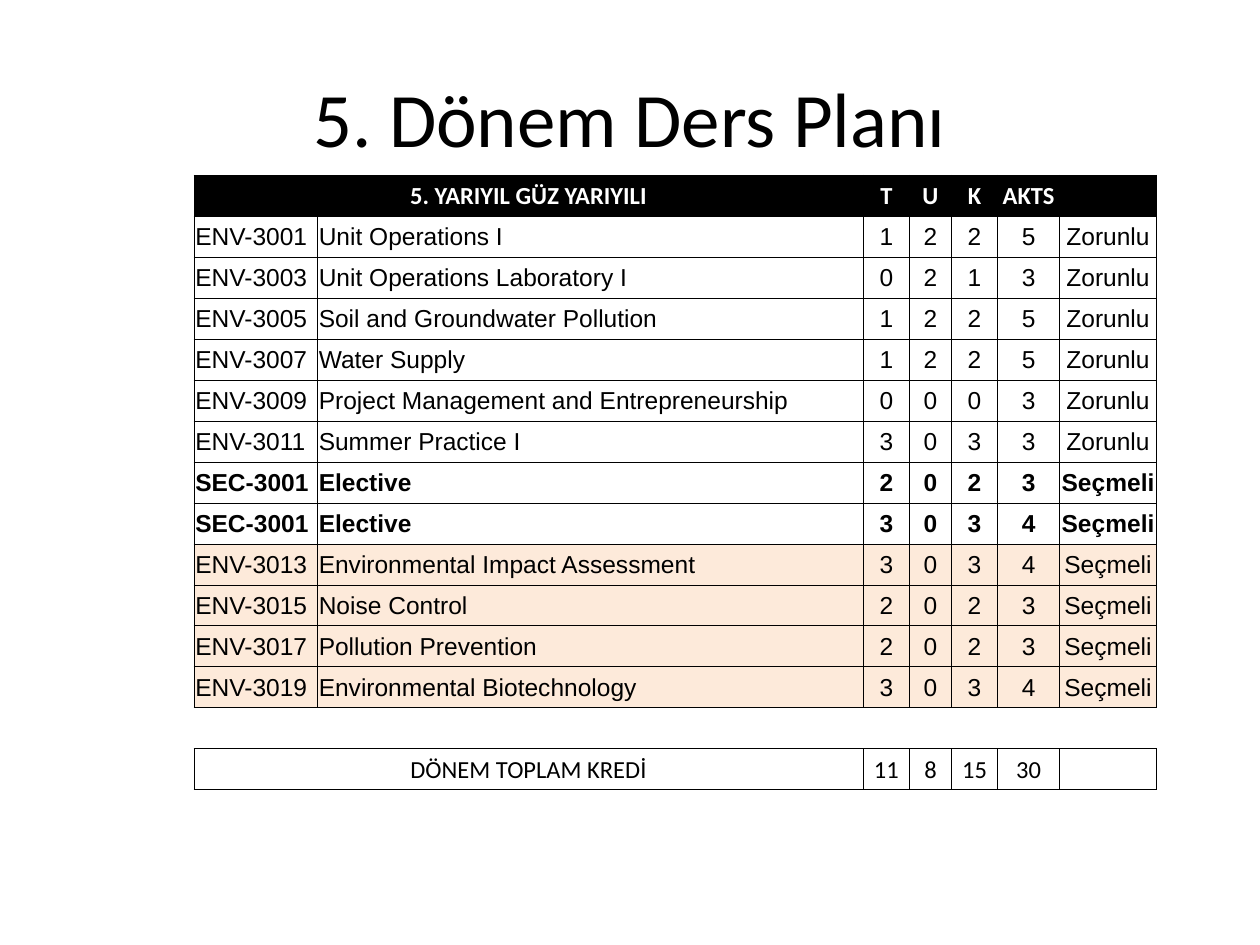
from lxml import etree
from pptx import Presentation
from pptx.dml.color import RGBColor
from pptx.enum.text import MSO_ANCHOR, PP_ALIGN
from pptx.oxml.ns import qn
from pptx.util import Inches, Pt

CENTER, LEFT = PP_ALIGN.CENTER, PP_ALIGN.LEFT
MIDDLE = MSO_ANCHOR.MIDDLE

BLACK = RGBColor(0x00, 0x00, 0x00)
WHITE = RGBColor(0xFF, 0xFF, 0xFF)
PEACH = RGBColor(0xFD, 0xEA, 0xDA)

COL_WIDTHS = [0.98, 4.33, 0.37, 0.33, 0.37, 0.49, 0.77]
TABLE_LEFT, TABLE_TOP, TABLE_HEIGHT = 1.54, 1.39, 4.88
ALL_SIDES = ("L", "R", "T", "B")

HEADER = ["5. YARIYIL GÜZ YARIYILI", "", "T", "U", "K", "AKTS", ""]
REQUIRED = [
    ["ENV-3001", "Unit Operations I", 1, 2, 2, 5],
    ["ENV-3003", "Unit Operations Laboratory I", 0, 2, 1, 3],
    ["ENV-3005", "Soil and Groundwater Pollution", 1, 2, 2, 5],
    ["ENV-3007", "Water Supply", 1, 2, 2, 5],
    ["ENV-3009", "Project Management and Entrepreneurship", 0, 0, 0, 3],
    ["ENV-3011", "Summer Practice I", 3, 0, 3, 3],
]
ELECTIVE_SLOTS = [
    ["SEC-3001", "Elective", 2, 0, 2, 3],
    ["SEC-3001", "Elective", 3, 0, 3, 4],
]
ELECTIVES = [
    ["ENV-3013", "Environmental Impact Assessment", 3, 0, 3, 4],
    ["ENV-3015", "Noise Control", 2, 0, 2, 3],
    ["ENV-3017", "Pollution Prevention", 2, 0, 2, 3],
    ["ENV-3019", "Environmental Biotechnology", 3, 0, 3, 4],
]
TOTAL = ["DÖNEM TOPLAM KREDİ", "", 11, 8, 15, 30, ""]


def add_run(p, text, size, font, color=BLACK, bold=False):
    r = p.add_run()
    r.text = str(text)
    r.font.size = Pt(size)
    r.font.name = font
    r.font.bold = bold
    r.font.color.rgb = color


def add_title(s, text):
    title = s.shapes.title
    title.left, title.top = Inches(0.5), Inches(0.3)
    title.width, title.height = Inches(9), Inches(1.25)
    tf = title.text_frame
    tf.vertical_anchor = MIDDLE
    p = tf.paragraphs[0]
    p.alignment = CENTER
    add_run(p, text, 44, "Calibri")


def set_borders(cell, sides):
    """Draw a thin black line on the given sides and none on the others."""
    tc_pr = cell._tc.get_or_add_tcPr()
    for side in ALL_SIDES:
        ln = etree.SubElement(tc_pr, qn(f"a:ln{side}"), w=str(Pt(0.5)))
        if side in sides:
            fill = etree.SubElement(ln, qn("a:solidFill"))
            etree.SubElement(fill, qn("a:srgbClr"), val=str(BLACK))
        else:
            etree.SubElement(ln, qn("a:noFill"))


def fill_row(row, values, font="Arial", fill=None, color=BLACK, bold=False,
             sides=ALL_SIDES, merged=False):
    """Write one table row; a merged row joins its first two cells."""
    cells = list(row.cells)
    if merged:
        cells[0].merge(cells[1])
    for col, (cell, value) in enumerate(zip(cells, values)):
        cell.margin_left = cell.margin_right = cell.margin_top = Inches(0.01)
        cell.margin_bottom = 0
        cell.vertical_anchor = MIDDLE
        set_borders(cell, sides)
        if fill is None:
            cell.fill.background()
        else:
            cell.fill.solid()
            cell.fill.fore_color.rgb = fill
        if value != "":
            p = cell.text_frame.paragraphs[0]
            p.alignment = LEFT if col < 2 and not merged else CENTER
            add_run(p, value, 14, font, color, bold)


def add_course_table(s):
    rows = [(HEADER, dict(font="Calibri", fill=BLACK, color=WHITE, bold=True, merged=True))]
    rows += [(course + ["Zorunlu"], {}) for course in REQUIRED]
    rows += [(course + ["Seçmeli"], dict(bold=True)) for course in ELECTIVE_SLOTS]
    rows += [(course + ["Seçmeli"], dict(fill=PEACH)) for course in ELECTIVES]
    rows.append(([""] * len(COL_WIDTHS), dict(sides=("T", "B"))))
    rows.append((TOTAL, dict(font="Calibri", merged=True)))

    table = s.shapes.add_table(
        len(rows), len(COL_WIDTHS), Inches(TABLE_LEFT), Inches(TABLE_TOP),
        Inches(sum(COL_WIDTHS)), Inches(TABLE_HEIGHT)).table
    table.first_row = table.horz_banding = False
    for column, width in zip(table.columns, COL_WIDTHS):
        column.width = Inches(width)
    for row, (values, style) in zip(table.rows, rows):
        row.height = Inches(TABLE_HEIGHT / len(rows))
        fill_row(row, values, **style)


def main():
    prs = Presentation()
    prs.slide_width, prs.slide_height = Inches(10), Inches(7.5)
    s = prs.slides.add_slide(prs.slide_layouts[5])
    add_title(s, "5. Dönem Ders Planı")
    add_course_table(s)
    prs.save("out.pptx")


if __name__ == "__main__":
    main()
